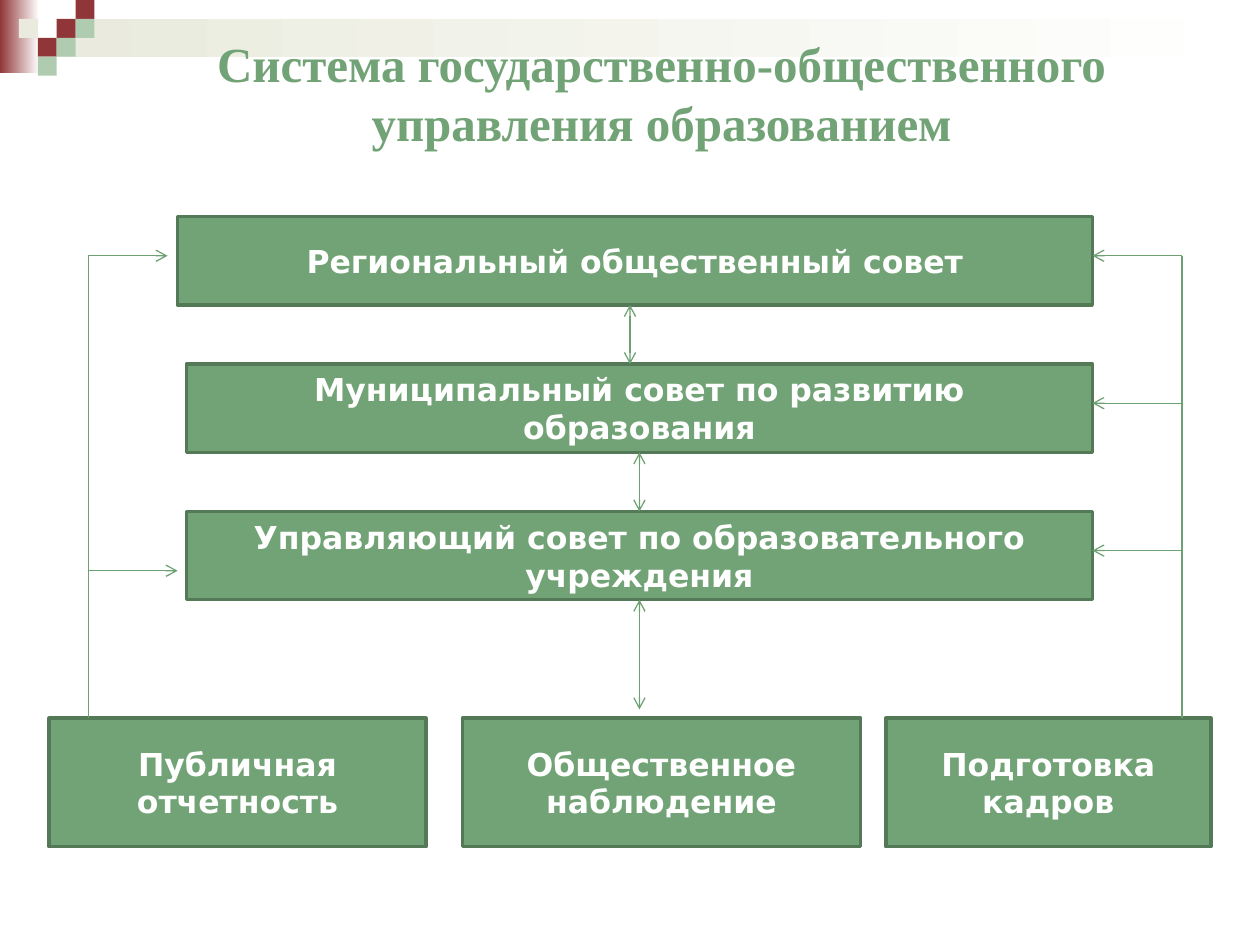
from dataclasses import dataclass

from lxml import etree
from pptx import Presentation
from pptx import util as u
from pptx.dml.color import RGBColor
from pptx.enum import shapes, text
from pptx.oxml.ns import qn


@dataclass(frozen=True)
class Theme:
    green: str = "72A376"
    edge: str = "547957"
    arrow: str = "6EA172"
    red: str = "903638"
    mint: str = "B0CCB0"
    sand: str = "EAEBDE"
    white: str = "FFFFFF"
    title_font: str = "Times New Roman"
    body_font: str = "DejaVu Sans"
    title_size: int = 28
    body_size: int = 18


T = Theme()
W, H = 10, 7.5
TITLE = "Система государственно-общественного управления образованием"
COUNCILS = [
    ("Региональный общественный совет", 1.41),
    ("Муниципальный совет по развитию образования", 1.48),
    ("Управляющий совет по образовательного учреждения", 1.48),
]
SUPPORTS = [
    ("Публичная отчетность", 0.39, 2.99),
    ("Общественное наблюдение", 3.67, 3.16),
    ("Подготовка кадров", 7.03, 2.58),
]
COUNCIL_TOP, COUNCIL_PITCH, COUNCIL_H, COUNCIL_RIGHT = 1.72, 1.17, 0.7, 8.67
SUPPORT_TOP, SUPPORT_H = 5.7, 1.02
LEFT_RAIL, RIGHT_RAIL, RAIL_TOP = 0.7, 9.38, 2.03
LEFT_BRANCHES = [(RAIL_TOP, 1.33), (4.53, 1.41)]
TILE = 0.15
TILES = [(3, 1, T.red), (4, 0, T.red), (4, 1, T.mint), (2, 2, T.red),
         (1, 1, T.sand), (3, 2, T.mint), (2, 3, T.mint)]
BANDS = [(0, 0, 0.31, 0.58, T.red), (3 * TILE, TILE, W - 3 * TILE, 2 * TILE, T.sand)]


def rgb(value):
    return RGBColor.from_string(value)


def add_rect(s, x, y, w, h, color):
    sp = s.shapes.add_shape(shapes.MSO_SHAPE.RECTANGLE, *map(u.Inches, (x, y, w, h)))
    sp.shadow.inherit = False
    sp.fill.solid()
    sp.fill.fore_color.rgb = rgb(color)
    sp.line.fill.background()
    return sp


def add_band(s, x, y, w, h, color):
    sp = add_rect(s, x, y, w, h, color)
    sp.fill.gradient()
    sp.fill.gradient_angle = 0
    for stop, value, position in zip(sp.fill.gradient_stops, (color, T.white), (0, 1)):
        stop.color.rgb = rgb(value)
        stop.position = position


def set_text(sp, content, font, size, color):
    tf = sp.text_frame
    tf.text = content
    tf.word_wrap = True
    tf.auto_size = text.MSO_AUTO_SIZE.NONE
    tf.vertical_anchor = text.MSO_ANCHOR.MIDDLE
    p = tf.paragraphs[0]
    p.alignment = text.PP_ALIGN.CENTER
    p.font.name, p.font.size, p.font.bold = font, u.Pt(size), True
    p.font.color.rgb = rgb(color)


def add_box(s, label, x, y, w, h):
    sp = add_rect(s, x, y, w, h, T.green)
    sp.line.color.rgb = rgb(T.edge)
    sp.line.width = u.Pt(2)
    set_text(sp, label, T.body_font, T.body_size, T.white)
    return sp


def add_line(s, x1, y1, x2, y2, ends=()):
    c = s.shapes.add_connector(shapes.MSO_CONNECTOR.STRAIGHT, *map(u.Inches, (x1, y1, x2, y2)))
    c.line.color.rgb = rgb(T.arrow)
    c.line.width = u.Pt(0.75)
    ln = c.line._get_or_add_ln()
    for end in ends:
        etree.SubElement(ln, qn(f"a:{end}"), type="arrow")
    etree.SubElement(ln.getparent(), qn("a:effectLst"))
    return c


def main():
    prs = Presentation()
    prs.slide_width, prs.slide_height = u.Inches(W), u.Inches(H)
    s = prs.slides.add_slide(prs.slide_layouts[5])

    for band in BANDS:
        add_band(s, *band)
    for col, row, color in TILES:
        add_rect(s, col * TILE, row * TILE, TILE, TILE, color)

    title = s.shapes.title
    title.left, title.top, title.width, title.height = map(u.Inches, (1, 0.3, 8.5, 0.87))
    set_text(title, TITLE, T.title_font, T.title_size, T.green)
    title.element.getparent().append(title.element)

    tops = [COUNCIL_TOP + i * COUNCIL_PITCH for i in range(len(COUNCILS))]
    councils = [add_box(s, label, x, y, COUNCIL_RIGHT - x, COUNCIL_H)
                for (label, x), y in zip(COUNCILS, tops)]
    for label, x, w in SUPPORTS:
        add_box(s, label, x, SUPPORT_TOP, w, SUPPORT_H)

    for rail in (LEFT_RAIL, RIGHT_RAIL):
        add_line(s, rail, SUPPORT_TOP, rail, RAIL_TOP)
    for y, x in LEFT_BRANCHES:
        add_line(s, LEFT_RAIL, y, x, y, ["tailEnd"])
    for i in range(len(COUNCILS)):
        y = RAIL_TOP + i * COUNCIL_PITCH
        add_line(s, RIGHT_RAIL, y, COUNCIL_RIGHT, y, ["tailEnd"])

    both = ["headEnd", "tailEnd"]
    middle = (COUNCILS[-1][1] + COUNCIL_RIGHT) / 2
    add_line(s, W / 2, tops[1], W / 2, tops[0] + COUNCIL_H, both)
    link = add_line(s, middle, tops[2], middle, tops[1] + COUNCIL_H, both)
    link.begin_connect(councils[2], 0)
    link.end_connect(councils[1], 2)
    link = add_line(s, middle, 5.63, middle, tops[2] + COUNCIL_H, both)
    link.end_connect(councils[2], 2)

    prs.save("out.pptx")


if __name__ == "__main__":
    main()
